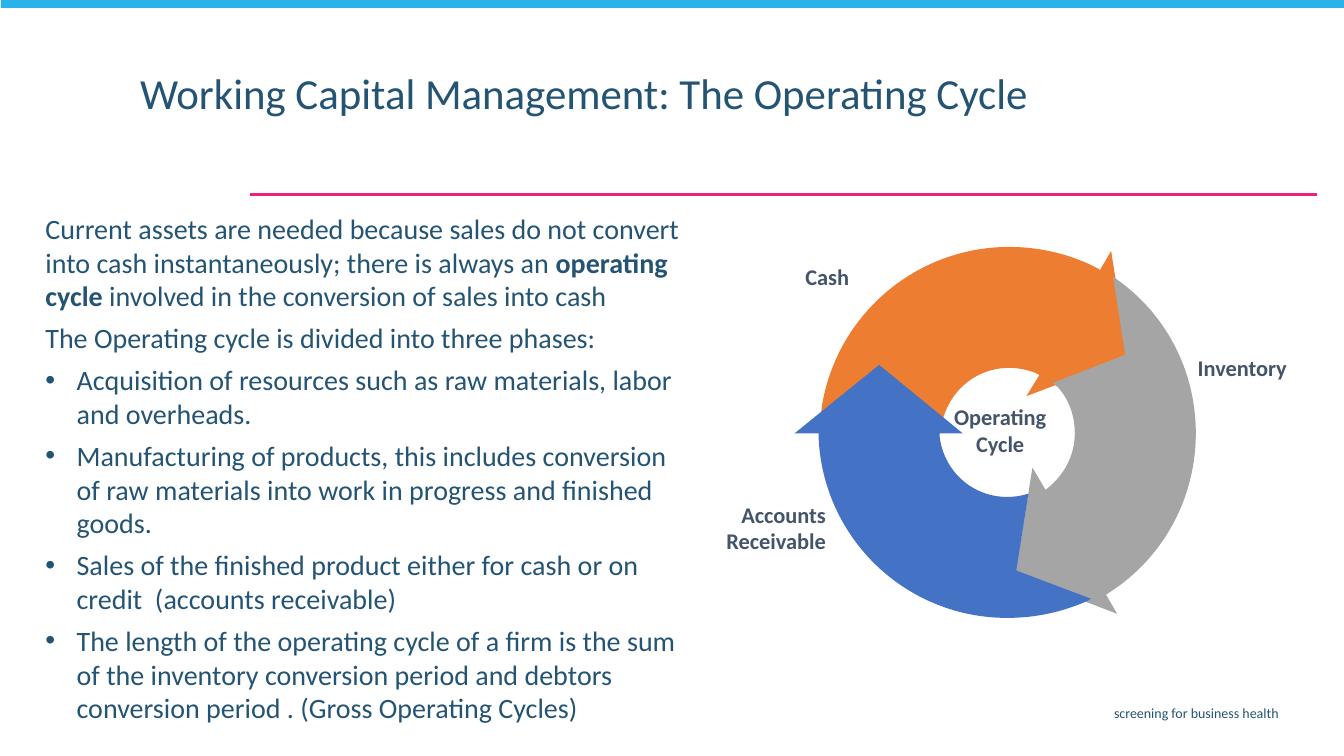
"""Build the operating cycle slide on working capital management."""
import pptx
import pptx.util
import pptx.dml.color
import pptx.enum.shapes
import pptx.enum.text
import pptx.oxml.ns
import lxml.etree

Inches = pptx.util.Inches
Pt = pptx.util.Pt
ALIGN = pptx.enum.text.PP_ALIGN
ANCHOR = pptx.enum.text.MSO_ANCHOR

THEME = {
    "font": "Calibri", "ink": "245473", "label": "44546A",
    "band": "29B3E8", "rule": "EC2179",
    "cash": "ED7D31", "inventory": "A5A5A5", "receivable": "4472C4",
    "title_size": 30.6, "body_size": 20, "label_size": 16, "footer_size": 10,
}

TITLE = "Working Capital Management: The Operating Cycle"
FOOTER = "screening for business health"
INTRO = [
    [("Current assets are needed because sales do not convert into cash "
      "instantaneously; there is always an", False),
     (" operating cycle ", True),
     ("involved in the conversion of sales into cash", False)],
    "The Operating cycle is divided into three phases:",
]
PHASES = [
    "Acquisition of resources such as raw materials, labor and overheads.",
    "Manufacturing of products, this includes conversion of raw materials "
    "into work in progress and finished goods.",
    "Sales of the finished product either for cash or on credit  (accounts receivable)",
    "The length of the operating cycle of a firm is the sum of the inventory "
    "conversion period and debtors conversion period . (Gross Operating Cycles)",
]
LABELS = [
    (["Cash"], (7.3, 2.56, 1.22, 0.37), ALIGN.RIGHT),
    (["Accounts Receivable"], (7.07, 4.91, 1.22, 0.64), ALIGN.RIGHT),
    (["Inventory"], (11.78, 3.46, 1.22, 0.37), ALIGN.LEFT),
    (["Operating", "Cycle"], (9.31, 3.94, 1.22, 0.64), ALIGN.CENTER),
]
ARROWS = {
    "cash": [
        (10.01, 2.45), (10.33, 2.45, 10.64, 2.53, 10.9, 2.67), (10.91, 2.68),
        (11.02, 2.49), (11.19, 3.55), (10.18, 3.93), (10.31, 3.72), (10.27, 3.7),
        (10.19, 3.67, 10.1, 3.65, 10.01, 3.65), (9.7, 3.65, 9.45, 3.85, 9.36, 4.13),
        (9.35, 4.18), (8.73, 3.69), (8.14, 4.17), (8.15, 4.04),
        (8.29, 3.14, 9.07, 2.45, 10.01, 2.45),
    ],
    "inventory": [
        (11.04, 2.75), (11.06, 2.76), (11.55, 3.1, 11.86, 3.66, 11.86, 4.3),
        (11.86, 4.93, 11.55, 5.5, 11.06, 5.84), (10.97, 5.9), (11.08, 6.09),
        (10.07, 5.7), (10.24, 4.64), (10.37, 4.86), (10.43, 4.81),
        (10.57, 4.68, 10.66, 4.5, 10.66, 4.3), (10.66, 4.12, 10.6, 3.96, 10.49, 3.84),
        (10.44, 3.8), (11.16, 3.52),
    ],
    "receivable": [
        (8.72, 3.62), (9.55, 4.3), (9.32, 4.3), (9.32, 4.33),
        (9.36, 4.67, 9.64, 4.93, 9.99, 4.93), (10.06, 4.93, 10.13, 4.92, 10.19, 4.9),
        (10.2, 4.9), (10.08, 5.66), (10.82, 5.94), (10.79, 5.96),
        (10.54, 6.07, 10.28, 6.13, 9.99, 6.13), (8.99, 6.13, 8.17, 5.35, 8.12, 4.35),
        (8.12, 4.3), (7.88, 4.3),
    ],
}


def color(key):
    return pptx.dml.color.RGBColor.from_string(THEME[key])


def paint(shape, key):
    shape.shadow.inherit = False
    shape.fill.solid()
    shape.fill.fore_color.rgb = color(key)
    shape.line.fill.background()


def add_bullet(paragraph):
    properties = paragraph._p.get_or_add_pPr()
    properties.set("marL", str(Inches(0.31)))
    properties.set("indent", str(-Inches(0.31)))
    for tag, name, value in (("buFont", "typeface", "Arial"), ("buChar", "char", "•")):
        bullet = lxml.etree.SubElement(properties, pptx.oxml.ns.qn("a:" + tag))
        bullet.set(name, value)


def add_text(slide, paragraphs, box, *, size, ink="ink", bold=False, align=ALIGN.LEFT,
             anchor=ANCHOR.TOP, margins=(0.1, 0.05), gap=0, spacing=None, bullets_from=None):
    frame = slide.shapes.add_textbox(*map(Inches, box)).text_frame
    frame.word_wrap = True
    frame.vertical_anchor = anchor
    frame.margin_left = frame.margin_right = Inches(margins[0])
    frame.margin_top = frame.margin_bottom = Inches(margins[1])
    for index, content in enumerate(paragraphs):
        paragraph = frame.add_paragraph() if index else frame.paragraphs[0]
        if bullets_from is not None and index >= bullets_from:
            add_bullet(paragraph)
        paragraph.alignment = align
        if spacing:
            paragraph.line_spacing = spacing
        if index and gap:
            paragraph.space_before = Pt(gap)
        runs = [(content, bold)] if isinstance(content, str) else content
        for words, strong in runs:
            run = paragraph.add_run()
            run.text = words
            run.font.name = THEME["font"]
            run.font.size = Pt(THEME[size])
            run.font.bold = strong
            run.font.color.rgb = color(ink)


def add_arrow(slide, outline, key):
    corners = [(Inches(segment[i]), Inches(segment[i + 1]))
               for segment in outline for i in range(0, len(segment), 2)]
    builder = slide.shapes.build_freeform(*corners[0])
    builder.add_line_segments(corners[1:], close=True)
    arrow = builder.convert_to_shape()
    paint(arrow, key)
    steps = arrow._element.iter(pptx.oxml.ns.qn("a:lnTo"))
    steps = iter(list(steps))
    for segment in outline[1:]:
        step = next(steps)
        if len(segment) == 6:
            step.tag = pptx.oxml.ns.qn("a:cubicBezTo")
            for _ in range(2):
                extra = next(steps)
                step.append(extra[0])
                extra.getparent().remove(extra)


def main():
    deck = pptx.Presentation()
    deck.slide_width, deck.slide_height = Inches(13.33), Inches(7.5)
    slide = deck.slides.add_slide(deck.slide_layouts[6])

    rule = slide.shapes.add_connector(pptx.enum.shapes.MSO_CONNECTOR.STRAIGHT,
                                      *map(Inches, (13.06, 1.93, 2.48, 1.93)))
    rule.line.color.rgb = color("rule")
    rule.line.width = Pt(1.5)
    lxml.etree.SubElement(rule._element.spPr, pptx.oxml.ns.qn("a:effectLst"))
    band = slide.shapes.add_shape(pptx.enum.shapes.MSO_SHAPE.RECTANGLE,
                                  *map(Inches, (0.01, -0.02, 13.34, 0.1)))
    paint(band, "band")

    add_text(slide, [FOOTER], (3.65, 6.94, 9.13, 0.29), size="footer_size", align=ALIGN.RIGHT)
    add_text(slide, [TITLE], (1.29, 0.71, 9.68, 0.76), size="title_size", spacing=0.8)
    add_text(slide, INTRO + PHASES, (0.36, 2.06, 6.58, 5.64), size="body_size",
             margins=(0.09, 0.04), gap=6, bullets_from=len(INTRO))
    for key, outline in ARROWS.items():
        add_arrow(slide, outline, key)
    for lines, box, align in LABELS:
        add_text(slide, lines, box, size="label_size", ink="label", bold=True,
                 align=align, anchor=ANCHOR.BOTTOM)
    deck.save("out.pptx")


if __name__ == "__main__":
    main()
